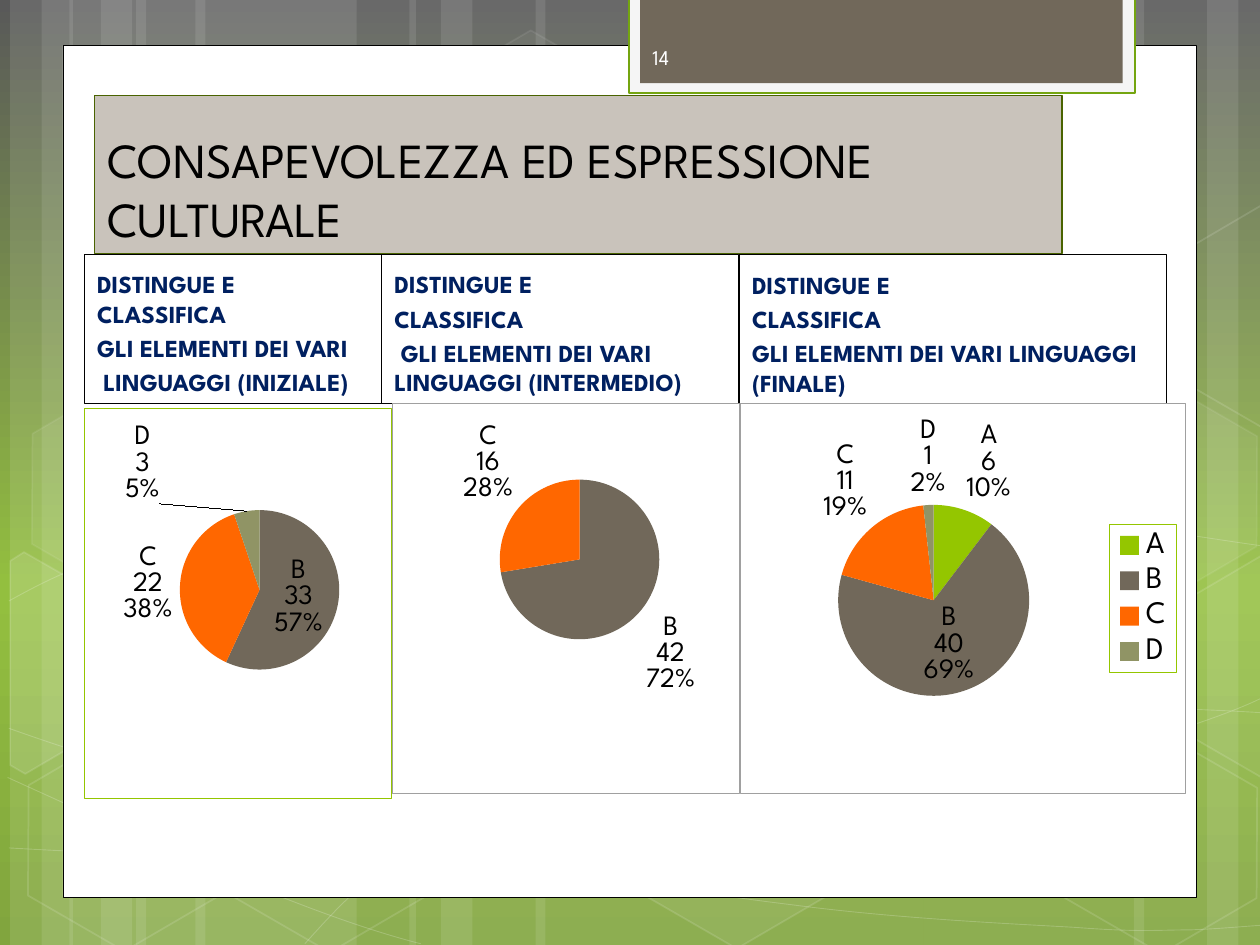
from copy import deepcopy
from math import cos, radians, sin

from lxml import etree
from pptx import Presentation
from pptx import util as u
from pptx.chart.data import CategoryChartData
from pptx.dml.color import RGBColor
from pptx.enum import chart as ch, shapes, text
from pptx.oxml import parse_xml
from pptx.oxml.ns import nsdecls, qn

COLS, ROWS = 100, 75
FONT = "League Spartan"
C = {"white": "FFFFFF", "black": "000000", "navy": "002060", "band": "C9C3BB",
     "band_line": "4A6300", "tab": "F5F5F5", "tab_line": "74A510",
     "brown": "71685A", "green": "94C600", "orange": "FF6700", "olive": "909465",
     "grey": "A0A0A0", "number": "FEFEFE"}
SKY = [("595959", 0), ("93BF3F", 0.62), ("81A53E", 1)]
SLICES = ["green", "brown", "orange", "olive"]
LABEL = ch.XL_LABEL_POSITION


def rgb(name):
    return RGBColor.from_string(C.get(name, name))


def turn(points, center, angle):
    """Rotate points about a center, clockwise in degrees."""
    (cx, cy), co, si = center, cos(radians(angle)), sin(radians(angle))
    return [(cx + (x - cx) * co - (y - cy) * si, cy + (x - cx) * si + (y - cy) * co)
            for x, y in points]


class Deck:
    def __init__(self):
        self.prs = Presentation()
        self.prs.slide_width, self.prs.slide_height = u.Inches(10), u.Inches(7.5)
        self.s = self.prs.slides.add_slide(self.prs.slide_layouts[4])
        self.cell = self.prs.slide_width / COLS
        for ph in list(self.s.placeholders):
            if ph.placeholder_format.idx in (2, 4):
                ph.element.getparent().remove(ph.element)

    def box(self, at):
        return [round(v * self.cell) for v in at]

    def background(self, stops):
        fill = self.s.background.fill
        fill.gradient()
        fill.gradient_angle = 270
        gs_list = self.s.element.find(".//" + qn("a:gsLst"))
        gs_list.append(deepcopy(gs_list[0]))
        for stop, (color, pos) in zip(fill.gradient_stops, stops):
            stop.color.rgb, stop.position = rgb(color), pos

    def paint(self, sp, fill=None, line=None, width=0.75, fill_a=100, line_a=100):
        for part, color, alpha, where in (
                (sp.fill, fill, fill_a, "a:solidFill"),
                (sp.line.fill, line, line_a, "a:ln/a:solidFill")):
            if not color:
                part.background()
                continue
            part.solid()
            part.fore_color.rgb = rgb(color)
            if alpha < 100:
                clr = sp.element.spPr.xpath(where)[0][0]
                etree.SubElement(clr, qn("a:alpha")).set("val", str(alpha * 1000))
        if line:
            sp.line.width = u.Pt(width)

    def shape(self, kind, at, rot=0, adj=(), **style):
        sp = self.s.shapes.add_shape(kind, *self.box(at))
        sp.shadow.inherit = False
        sp.rotation = rot
        for i, v in enumerate(adj):
            sp.adjustments[i] = v
        self.paint(sp, **style)

    def rect(self, at, **style):
        self.shape(shapes.MSO_SHAPE.RECTANGLE, at, **style)

    def outline(self, points, close=False, rot=0, **style):
        points = [self.box(p) for p in points]
        fb = self.s.shapes.build_freeform(*points[0])
        fb.add_line_segments(points[1:], close=close)
        sp = fb.convert_to_shape()
        sp.shadow.inherit = False
        sp.rotation = rot
        self.paint(sp, **style)
        return sp

    def curve(self, points, **style):
        """Cubic curves: a start, then two handles and an end for each."""
        sp = self.outline(points, **style)
        segments = sp.element.findall(".//" + qn("a:lnTo"))
        for i in range(0, len(segments), 3):
            cubic = etree.Element(qn("a:cubicBezTo"))
            segments[i].addprevious(cubic)
            for seg in segments[i:i + 3]:
                cubic.append(seg[0])
                seg.getparent().remove(seg)

    def text(self, at, lines, size, color, idx=None, bold=False, before=0,
             anchor=text.MSO_ANCHOR.BOTTOM, **style):
        if idx is None:
            sp = self.s.shapes.add_textbox(*self.box(at))
        else:
            sp = self.s.placeholders[idx]
            sp.left, sp.top, sp.width, sp.height = self.box(at)
            sp.element.getparent().append(sp.element)  # in front of the page
        self.paint(sp, **style)
        tf = sp.text_frame
        tf.word_wrap, tf.auto_size = True, text.MSO_AUTO_SIZE.NONE
        tf.vertical_anchor = anchor
        for i, line in enumerate(lines):
            p = tf.add_paragraph() if i else tf.paragraphs[0]
            p.alignment, p.space_before = text.PP_ALIGN.LEFT, u.Pt(before)
            r = p.add_run()
            r.text = line
            r.font.name, r.font.size, r.font.bold = FONT, u.Pt(size), bold
            r.font.color.rgb = rgb(color)

    def layout(self, parent, index, values, target=""):
        for old in parent.findall(qn("c:layout")):
            parent.remove(old)
        modes = '<c:xMode val="edge"/><c:yMode val="edge"/>' if len(values) > 2 else ""
        parts = "".join(f'<c:{k} val="{v}"/>' for k, v in zip("xywh", values))
        parent.insert(index, parse_xml(
            f'<c:layout {nsdecls("c")}><c:manualLayout>{target}{modes}{parts}'
            '</c:manualLayout></c:layout>'))

    def border(self, after, color):
        after.addnext(parse_xml(
            f'<c:spPr {nsdecls("c", "a")}><a:noFill/><a:ln w="6350"><a:solidFill>'
            f'<a:srgbClr val="{C[color]}"/></a:solidFill></a:ln></c:spPr>'))

    def pie_label(self, point, pos, shift=None):
        label = point.data_label
        label.font.size, label.font.name = u.Pt(16), FONT
        label.font.color.rgb = rgb("black")
        label.position = pos
        dl = label._dLbl
        for tag in ("c:showCatName", "c:showPercent", "c:showVal"):
            dl.find(qn(tag)).set("val", "1")
        etree.SubElement(dl, qn("c:separator")).text = "\n"
        if shift:
            self.layout(dl, 1, shift)

    def pie(self, at, values, plot, edge, inside=(), shifts=None, legend=None):
        data = CategoryChartData()
        data.categories = list("ABCD")
        data.add_series("Series 1", values)
        chart = self.s.shapes.add_chart(ch.XL_CHART_TYPE.PIE, *self.box(at), data).chart
        chart.has_title = False
        chart.font.size, chart.font.name = u.Pt(18), FONT
        chart.font.color.rgb = rgb("black")
        chart.plots[0].vary_by_categories = True
        root = chart._chartSpace.find(qn("c:chart"))
        self.border(root, edge)
        self.layout(root.find(qn("c:plotArea")), 0, plot, '<c:layoutTarget val="inner"/>')
        for i, (value, color) in enumerate(zip(values, SLICES)):
            point = chart.plots[0].series[0].points[i]
            point.format.fill.solid()
            point.format.fill.fore_color.rgb = rgb(color)
            self.pie_label(point, LABEL.CENTER if i in inside else LABEL.OUTSIDE_END,
                           (shifts or {}).get(i))
            if not value:  # an empty slice has no label
                dl = point.data_label._dLbl
                for child in list(dl)[1:]:
                    dl.remove(child)
                etree.SubElement(dl, qn("c:delete")).set("val", "1")
        chart.has_legend = bool(legend)
        if legend:
            chart.legend.position = ch.XL_LEGEND_POSITION.RIGHT
            chart.legend.include_in_layout = False
            el = root.find(qn("c:legend"))
            self.layout(el, 1, legend)
            self.border(el.find(qn("c:overlay")), "green")


d = Deck()
d.background(SKY)

# Backdrop: pale stripes
for x, w in [(10.8, 17.5), (0.8, 5), (3.3, 8.3), (15.5, 17.5), (5.5, 5), (8, 8.3),
             (73.3, 17.5), (95.8, 5), (90, 8.3), (42.5, 30.8), (32.5, 5), (35, 8.3)]:
    d.rect((x, 0, w, ROWS), fill="white", fill_a=10)

# Backdrop: thin curves
for points in [
    [(.7, 67.3), (6.1, 67.6), (11.5, 67.9), (19, 67.8), (26.5, 67.7), (35.8, 67.5),
     (45.8, 66.5), (55.8, 65.5), (70, 63.6), (79.2, 61.7), (88.3, 59.8), (97.7, 56.8),
     (100.7, 55.1)],
    [(.7, 47.7), (3.6, 46.1), (6.5, 44.6), (12.1, 43.1), (17.8, 41.6), (25.9, 39.4),
     (34.7, 38.7), (43.6, 38), (54.4, 37.9), (65.4, 38.7), (76.4, 39.5), (94.7, 42.6),
     (100.7, 43.4)],
    [(.6, 61.7), (12.7, 67.2), (24.7, 72.7), (33.4, 74.9)],
    [(.7, 57.8), (3.8, 58.9), (7, 60), (12.8, 61.6), (18.6, 63.1), (27.3, 65.6),
     (35.7, 67.3), (44, 69), (54.5, 70.8), (62.8, 71.8), (71.1, 72.9), (80, 73.3),
     (85.3, 73.6), (90.5, 74), (91.9, 73.8), (94.5, 73.8), (97.1, 73.7), (98.9, 73.5),
     (100.7, 73.4)],
    [(24.2, 74.9), (26, 72.9), (27.8, 70.9), (30.2, 69.1), (32.6, 67.3), (36, 65.3),
     (38.8, 63.9), (41.6, 62.5), (43.3, 61.9), (47, 60.9), (50.6, 59.9), (57.3, 58.5),
     (60.8, 57.8), (64.4, 57.1), (64.9, 57.1), (68, 56.9), (71.1, 56.6), (76, 56.3),
     (79.4, 56.2), (86, 56.1), (93, 56.1), (100.6, 56.6)],
]:
    d.curve(points, line="white", width=0.5, line_a=20)

# Backdrop: hexagons, whole and cut by the slide's edge
for x, y, fill_a, line_a in [(33.4, 3.6, 4, 8), (49.7, 58.9, 6, 12), (1.1, 59.1, 0, 12),
                             (1.4, 31.2, 7, 8), (17.4, 59.2, 0, 12), (75.3, 45.3, 10, 12),
                             (83.4, 59.3, 0, 12), (83.4, 31.4, 7, 8)]:
    d.shape(shapes.MSO_SHAPE.HEXAGON, (x, y, 17.5, 15.2), rot=30, adj=(0.285, 1.155),
            fill="white" if fill_a else None, fill_a=fill_a,
            line="white", width=1, line_a=line_a)
RIGHT_CUT = [(92.6, 48.5), (100.1, 44.1), (100.9, 44.6), (100.9, 61.3), (100.2, 61.7),
             (92.6, 57.3)]
for points, center, fill_a in [
    ([(.8, 44.5), (1.9, 43.8), (9.6, 48.2), (9.5, 57), (2, 61.4), (.8, 60.7)],
     (3.6, 53.5), 10),
    (RIGHT_CUT, (98.5, 52), 4),
    ([(x, y - 27.8) for x, y in RIGHT_CUT], (98.5, 24.2), 0),
]:
    d.outline(turn(points, center, -30), close=True, rot=30,
              fill="white" if fill_a else None, fill_a=fill_a,
              line="white", width=1, line_a=12)

# Page and number tab
d.rect((5, 3.6, 90, 67.6), fill="white", line="black", width=0.5)
d.rect((49.9, -0.2, 40.2, 7.6), fill="tab", line="tab_line", width=1.25)
d.rect((50.8, -0.2, 38.3, 6.8), fill="brown")
d.text((50.8, 2.5, 14.6, 4), ["14"], 12, "number", anchor=text.MSO_ANCHOR.MIDDLE)

# Title
d.text((7.5, 7.6, 76.8, 12.5), ["CONSAPEVOLEZZA ED ESPRESSIONE CULTURALE"], 28, "black",
       idx=0, fill="band", line="band_line")

# Column headings
for x, w, idx, lines in [
    (6.7, 23.6, 1, ["DISTINGUE E CLASSIFICA", "GLI ELEMENTI DEI VARI",
                    " LINGUAGGI (INIZIALE)"]),
    (30.3, 28.3, 3, ["DISTINGUE E", "CLASSIFICA",
                     " GLI ELEMENTI DEI VARI LINGUAGGI (INTERMEDIO)"]),
    (58.7, 33.9, None, ["DISTINGUE E", "CLASSIFICA",
                        "GLI ELEMENTI DEI VARI LINGUAGGI (FINALE)"]),
]:
    d.text((x, 20.2, w, 11.8), lines, 14, "navy", idx=idx, bold=True, before=2.8,
           line="black")

# Pies: start, middle and end of the year
d.pie((6.7, 32.4, 24.4, 31), (0, 33, 22, 3), (0.31, 0.26, 0.52, 0.41), "green",
      inside=(1,), shifts={3: (-0.28, 0)})
d.pie((31.1, 32, 27.6, 31), (0, 42, 16, 0), (0.31, 0.19, 0.46, 0.42), "grey")
d.pie((58.7, 32, 35.4, 31), (6, 40, 11, 1), (0.22, 0.26, 0.43, 0.49), "grey",
      inside=(1,), legend=(0.83, 0.31, 0.15, 0.38))

d.prs.save("out.pptx")
